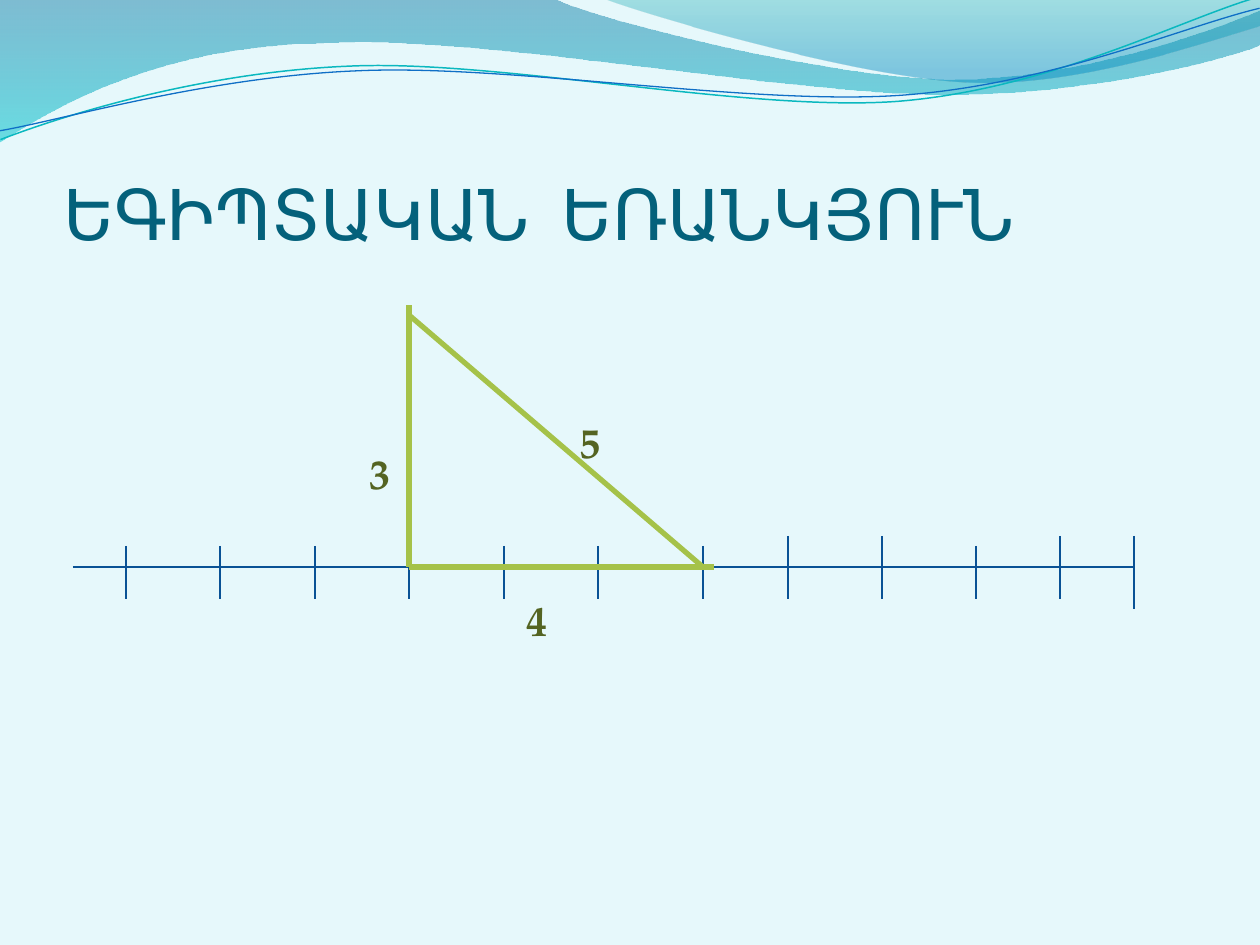
from lxml.etree import SubElement
from pptx import Presentation
from pptx.dml.color import RGBColor
from pptx.enum.shapes import MSO_CONNECTOR
from pptx.enum.text import MSO_ANCHOR, MSO_AUTO_SIZE, PP_ALIGN
from pptx.oxml.ns import qn
from pptx.util import Pt

PX = 914400 / 126

PALE = RGBColor(0xE6, 0xF8, 0xFB)
DEEP = RGBColor(0x00, 0x74, 0xA1)
AQUA = RGBColor(0x00, 0xC6, 0xCF)
TEAL = RGBColor(0x00, 0xA1, 0xA9)
SKY = RGBColor(0x00, 0x8B, 0xBF)
CYAN = RGBColor(0x0A, 0xB8, 0xBF)
BLUE = RGBColor(0x0F, 0x6F, 0xC6)
NAVY = RGBColor(0x09, 0x52, 0x95)
INK = RGBColor(0x04, 0x61, 0x7B)
LIME = RGBColor(0xA5, 0xC2, 0x49)
OLIVE = RGBColor(0x54, 0x64, 0x22)

# A pair is a corner; six numbers are a curve's two handles and its end.
BAND = [(0, 0), (554, -1), (600, 21, 837, 79, 955, 79),
        (1075, 79, 1207, 33, 1260, 11), (1261, 45),
        (1239, 55, 1096, 96, 940, 94), (783, 94, 481, 35, 324, 43),
        (163, 45, 58, 105, -1, 142)]
CREST = [(604, -1), (641, 14, 859, 78, 969, 82),
         (1079, 87, 1211, 40, 1260, 26), (1260, 0)]
CURVES = [
    ([(-2, 110), (58, 90, 199, 52, 350, 53), (499, 53, 745, 118, 896, 114),
      (1049, 109, 1184, 45, 1260, 27)], CYAN, 0.85),
    ([(-2, 101), (57, 94, 207, 57, 357, 58), (509, 58, 750, 112, 902, 108),
      (1052, 104, 1187, 52, 1262, 38)], BLUE, 0.75),
]
TILT = 357.3

# Number line: x, top and bottom of each tick
TICKS = [(126 + 189 * i // 2, 546, 599) for i in range(6)] + [
    (703, 546, 599), (788, 536, 599), (882, 536, 599),
    (976, 546, 599), (1060, 536, 599), (1134, 536, 609)]
SIDES = [(409, 567, 409, 305), (409, 315, 703, 567), (409, 567, 714, 567)]
LABELS = [("5", 567, 410, 105), ("3", 357, 441, 78), ("4", 514, 588, 68)]

TITLE_FONT = {"name": "Calibri", "size": Pt(40), "bold": False}
LABEL_FONT = {"name": "TeX Gyre Pagella", "size": Pt(24), "bold": True}


def px(*nums):
    return [round(n * PX) for n in nums]


def style(item, form):
    for key, value in form.items():
        setattr(item, key, value)


def add_free(slide, path, close):
    """Lay out all points as lines, then join each curve's three as one."""
    spots = [tuple(px(*part[i:i + 2]))
             for part in path for i in range(0, len(part), 2)]
    pen = slide.shapes.build_freeform(*spots[0], scale=1.0)
    pen.add_line_segments(spots[1:], close=close)
    shape = pen.convert_to_shape()
    shape.shadow.inherit = False
    legs = iter(list(shape._element.iter(qn("a:lnTo"))))
    for part in path[1:]:
        first = next(legs)
        if len(part) == 6:
            first.tag = qn("a:cubicBezTo")
            for _ in range(2):
                leg = next(legs)
                first.append(leg[0])
                leg.getparent().remove(leg)
    return shape


def add_wave(slide, path, stops):
    """Fill a wave from top to bottom; a stop is place, colour, alpha."""
    shape = add_free(slide, path, True)
    shape.line.fill.background()
    shape.fill.gradient()
    shape.fill.gradient_angle = 270
    for stop, (place, color, _) in zip(shape.fill.gradient_stops, stops):
        stop.position = place
        stop.color.rgb = color
    tones = list(shape._element.spPr.iter(qn("a:srgbClr")))
    for tone, (_, _, alpha) in zip(tones, stops):
        SubElement(tone, qn("a:alpha"), val=str(alpha * 1000))


def add_curve(slide, path, color, width):
    shape = add_free(slide, path, False)
    shape.rotation = TILT
    shape.fill.background()
    shape.line.color.rgb = color
    shape.line.width = Pt(width)


def add_line(slide, ends, color, width):
    line = slide.shapes.add_connector(MSO_CONNECTOR.STRAIGHT, *px(*ends))
    line.line.color.rgb = color
    line.line.width = Pt(width)
    SubElement(line._element.spPr, qn("a:effectLst"))


def add_run(para, text, form, color):
    run = para.add_run()
    run.text = text
    style(run.font, form)
    run.font.color.rgb = color
    return run


def set_title(slide):
    title = slide.shapes.title
    slide.shapes._spTree.append(title._element)
    style(title, dict(zip(("left", "top", "width", "height"),
                          px(63, 97, 1134, 158))))
    frame = title.text_frame
    style(frame, {"vertical_anchor": MSO_ANCHOR.BOTTOM, "word_wrap": True,
                  "auto_size": MSO_AUTO_SIZE.NONE, "margin_left": 0,
                  "margin_right": 0, "margin_bottom": 0})
    para = frame.paragraphs[0]
    para.alignment = PP_ALIGN.LEFT
    add_run(para, "ԵԳԻՊՏԱԿԱՆ", TITLE_FONT, INK)
    gap = add_run(para, " ", TITLE_FONT, INK)
    gap.font._element.set("spc", "900")  # widen the word gap
    add_run(para, "ԵՌԱՆԿՅՈՒՆ", TITLE_FONT, INK)


def add_label(slide, text, left, top, width):
    box = slide.shapes.add_textbox(*px(left, top, width, 63))
    frame = box.text_frame
    style(frame, {"word_wrap": True,
                  "auto_size": MSO_AUTO_SIZE.SHAPE_TO_FIT_TEXT})
    add_run(frame.paragraphs[0], text, LABEL_FONT, OLIVE)


def main():
    deck = Presentation()
    deck.slide_width, deck.slide_height = px(1260, 945)
    slide = deck.slides.add_slide(deck.slide_layouts[5])
    back = slide.background.fill
    back.solid()
    back.fore_color.rgb = PALE

    add_wave(slide, BAND, [(0, DEEP, 45), (1, AQUA, 55)])
    add_wave(slide, CREST, [(0, TEAL, 30), (0.8, SKY, 45)])
    for curve in CURVES:
        add_curve(slide, *curve)
    set_title(slide)

    add_line(slide, (73, 567, 1134, 567), NAVY, 0.75)
    for x, top, base in TICKS:
        add_line(slide, (x, top, x, base), NAVY, 0.75)
    for side in SIDES:
        add_line(slide, side, LIME, 3)
    for label in LABELS:
        add_label(slide, *label)
    deck.save("out.pptx")


if __name__ == "__main__":
    main()
